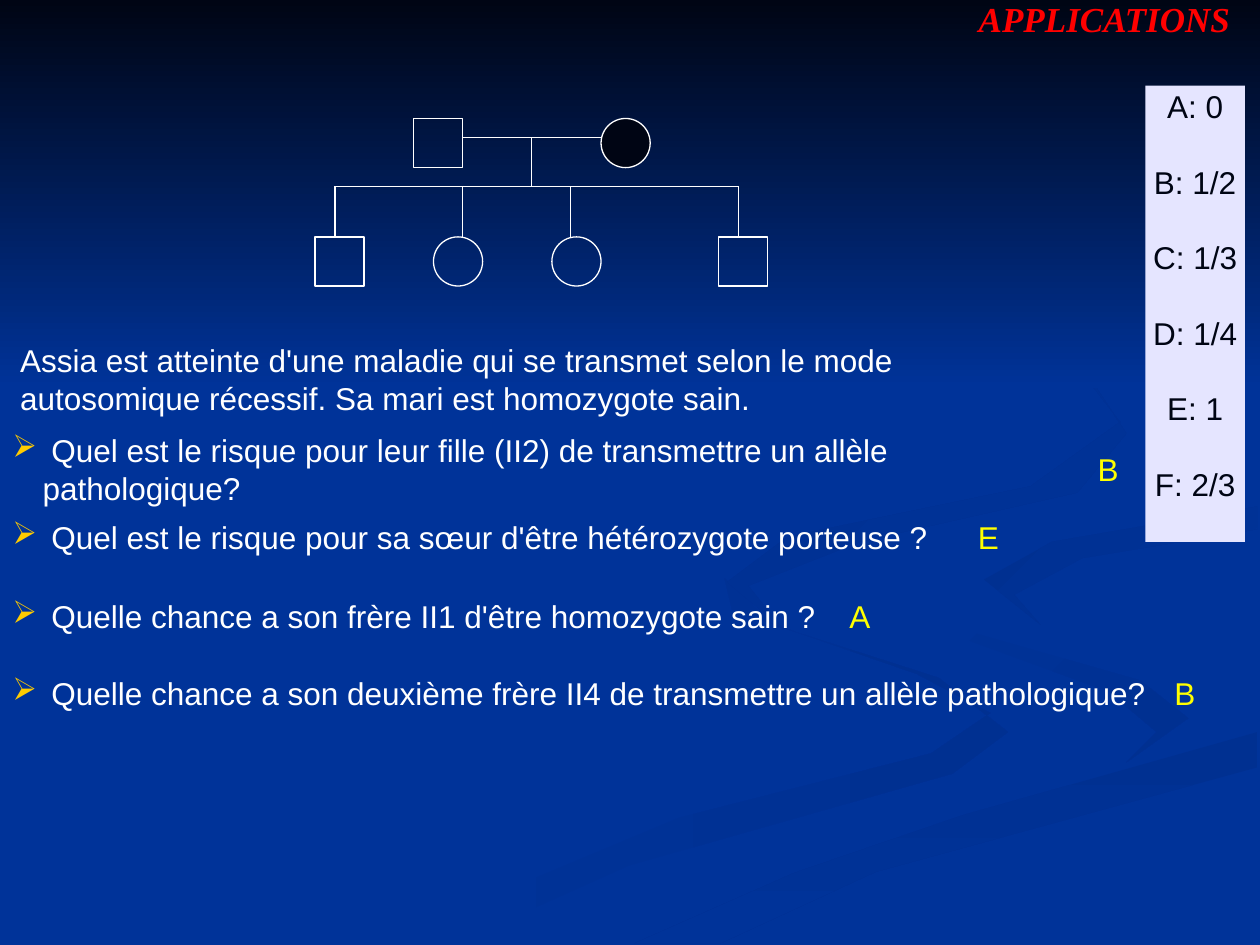
from lxml import etree
from pptx import Presentation
from pptx.dml.color import RGBColor
from pptx.enum.shapes import MSO_CONNECTOR, MSO_SHAPE
from pptx.enum.text import MSO_ANCHOR, PP_ALIGN
from pptx.oxml.ns import qn
from pptx.util import Inches, Pt

STRAIGHT = MSO_CONNECTOR.STRAIGHT
SQUARE, CIRCLE = MSO_SHAPE.RECTANGLE, MSO_SHAPE.OVAL
TOP, MIDDLE = MSO_ANCHOR.TOP, MSO_ANCHOR.MIDDLE
LEFT, CENTER = PP_ALIGN.LEFT, PP_ALIGN.CENTER

BLUE, NIGHT, WHITE, YELLOW = "003399", "000514", "FFFFFF", "FFFF00"
SHADE = "003091"
BODY = {"name": "Arial", "size": Pt(18)}
HEADING = {"name": "Times New Roman", "size": Pt(20), "bold": True, "italic": True}
LINE_PITCH = Pt(21.6)
SYMBOL = 0.39

WAVES = [
    (BLUE, SHADE, 0, [
        (5.75, 4.59), (5.81, 4.84), (7.28, 5.35), (7.86, 5.66), (7.39, 5.98), (5.39, 6.49),
        (3, 7.49), (3.61, 7.49), (4.99, 6.87), (7.56, 6.14), (8, 5.81), (7.45, 5.38),
        (6.14, 4.96)]),
    (BLUE, SHADE, 45, [
        (7.24, 4.64), (7.46, 5), (8.8, 5.49), (9.18, 5.81), (8.94, 6.05), (9.43, 5.7),
        (9.05, 5.4), (7.58, 4.98)]),
    (SHADE, BLUE, 90, [
        (5.03, 7.49), (5.71, 7.49), (6.95, 6.92), (9.98, 6.09), (9.98, 5.81), (7.64, 6.47),
        (6.3, 6.93)]),
    (SHADE, BLUE, 45, [
        (7.81, 4.6), (8.26, 4.96), (8.05, 4.72), (8.59, 4.43), (9.98, 4.2), (9.98, 4.02),
        (8.35, 4.3)]),
    (SHADE, BLUE, 45, [
        (7.62, 2.33), (8.54, 2.83), (8.94, 3.44), (8.55, 3.91), (6.83, 4.3), (5.94, 4.65),
        (6.22, 5), (5.77, 4.62), (6.25, 4.26), (8.18, 3.86), (8.89, 3.35), (8.46, 2.79)]),
]

QUESTIONS = [
    (3.52, " Quel est le risque pour leur fille (II2) de transmettre un allèle pathologique?",
     8.75, "B", 8.61),
    (4.06, " Quel est le risque pour sa sœur d'être hétérozygote porteuse ?", 9.02, "E", 7.66),
    (4.69, " Quelle chance a son frère II1 d'être homozygote sain ?", 9.02, "A", 6.64),
    (5.3, " Quelle chance a son deuxième frère II4 de transmettre un allèle pathologique?",
     9.45, "B", 9.22),
]


def color(value):
    return RGBColor.from_string(value)


def shade(shape, first, last, angle):
    shape.shadow.inherit = False
    shape.line.fill.background()
    shape.fill.gradient()
    shape.fill.gradient_angle = -angle % 360
    for stop, value in zip(shape.fill.gradient_stops, (first, last)):
        stop.color.rgb = color(value)


def paint_backdrop(page, left, top, width, height):
    fill = page.background.fill
    fill.solid()
    fill.fore_color.rgb = color(BLUE)
    for first, last, angle, points in WAVES:
        corners = [(Inches(left + x), Inches(top + y)) for x, y in points]
        builder = page.shapes.build_freeform(*corners[0])
        builder.add_line_segments(corners[1:], close=True)
        shade(builder.convert_to_shape(), first, last, angle)
    banner = page.shapes.add_shape(SQUARE, *map(Inches, (left, top, width, height)))
    shade(banner, NIGHT, BLUE, 90)


def add_bullet(para):
    properties = para._p.get_or_add_pPr()
    properties.set("marL", str(Inches(0.24)))
    properties.set("indent", str(-Inches(0.24)))
    tint = etree.SubElement(properties, qn("a:buClr"))
    etree.SubElement(tint, qn("a:srgbClr"), val="FFCC00")
    etree.SubElement(properties, qn("a:buChar"), char="➢")


def write(box, lines, tint, font=BODY, align=LEFT, bullet=False, gap=0, **frame_format):
    frame = box.text_frame
    frame.word_wrap = True
    for name, value in frame_format.items():
        setattr(frame, name, value)
    for index, line in enumerate(lines):
        para = frame.paragraphs[0] if index == 0 else frame.add_paragraph()
        if bullet:
            add_bullet(para)
        para.alignment = align
        para.line_spacing = LINE_PITCH
        if index and gap:
            para.space_before = gap
        span = para.add_run()
        span.text = line
        for name, value in font.items():
            setattr(span.font, name, value)
        span.font.color.rgb = color(tint)


def add_text(page, left, top, width, height, *content, **options):
    box = page.shapes.add_textbox(*map(Inches, (left, top, width, height)))
    write(box, *content, **options)


def add_title(page, left, top, width, height):
    add_text(page, left, top, width, height, ["APPLICATIONS"], "FF0000", font=HEADING,
             align=CENTER, vertical_anchor=MIDDLE, margin_left=Inches(0.43))


def add_choices(page, left, top, width, height):
    panel = page.shapes.add_shape(SQUARE, *map(Inches, (left, top, width, height)))
    panel.shadow.inherit = False
    panel.fill.solid()
    panel.fill.fore_color.rgb = color("E5E5FF")
    panel.line.fill.background()
    write(panel, ["A: 0", "B: 1/2", "C: 1/3", "D: 1/4", "E: 1", "F: 2/3"], NIGHT,
          align=CENTER, gap=LINE_PITCH, vertical_anchor=TOP, margin_top=Inches(0.01),
          margin_left=0, margin_right=0)


def add_person(page, kind, left, top, affected=False):
    person = page.shapes.add_shape(kind, *map(Inches, (left, top, SYMBOL, SYMBOL)))
    person.shadow.inherit = False
    person.line.color.rgb = color(WHITE)
    person.line.width = Pt(0.75)
    if affected:
        person.fill.solid()
        person.fill.fore_color.rgb = color(NIGHT)
    else:
        person.fill.background()


def add_link(page, *ends):
    link = page.shapes.add_connector(STRAIGHT, *map(Inches, ends))
    link.line.color.rgb = color(WHITE)
    link.line.width = Pt(0.75)
    etree.SubElement(link._element.spPr, qn("a:effectLst"))


def add_pedigree(page, left, top):
    couple, sibling, child = top + 0.15, top + 0.54, top + 0.94
    father, mother, descent = left + 0.78, left + 2.27, left + 1.72
    add_person(page, SQUARE, father, top)
    add_person(page, CIRCLE, mother, top, affected=True)
    add_link(page, father + SYMBOL, couple, mother, couple)
    add_link(page, descent, couple, descent, sibling)
    add_link(page, left + 0.16, sibling, left + 3.36, sibling)
    children = [(SQUARE, 0, 0.16), (CIRCLE, 0.94, 1.17), (CIRCLE, 1.88, 2.03), (SQUARE, 3.2, 3.36)]
    for kind, offset, drop in children:
        add_link(page, left + drop, sibling, left + drop, child)
        add_person(page, kind, left + offset, child)


def add_questions(page, left, top):
    add_text(page, left, top, 8.82, 0.72,
             ["Assia est atteinte d'une maladie qui se transmet selon le mode",
              "autosomique récessif. Sa mari est homozygote sain."],
             WHITE, margin_left=Inches(0.16))
    for row, question, width, answer, answer_left in QUESTIONS:
        add_text(page, left, row, width, 0.4, [question], WHITE, bullet=True,
                 vertical_anchor=MIDDLE)
        add_text(page, left + answer_left, row, 0.37, 0.4, [answer], YELLOW, align=CENTER)


def main():
    deck = Presentation()
    deck.slide_width, deck.slide_height = Inches(10), Inches(7.5)
    page = deck.slides.add_slide(deck.slide_layouts[6])
    paint_backdrop(page, 0, 0, 10, 3.08)
    add_title(page, 7.2, 0.02, 2.8, 0.28)
    add_choices(page, 9.09, 0.68, 0.79, 3.62)
    add_pedigree(page, 2.5, 0.94)
    add_questions(page, 0, 2.66)
    deck.save("out.pptx")


if __name__ == "__main__":
    main()
